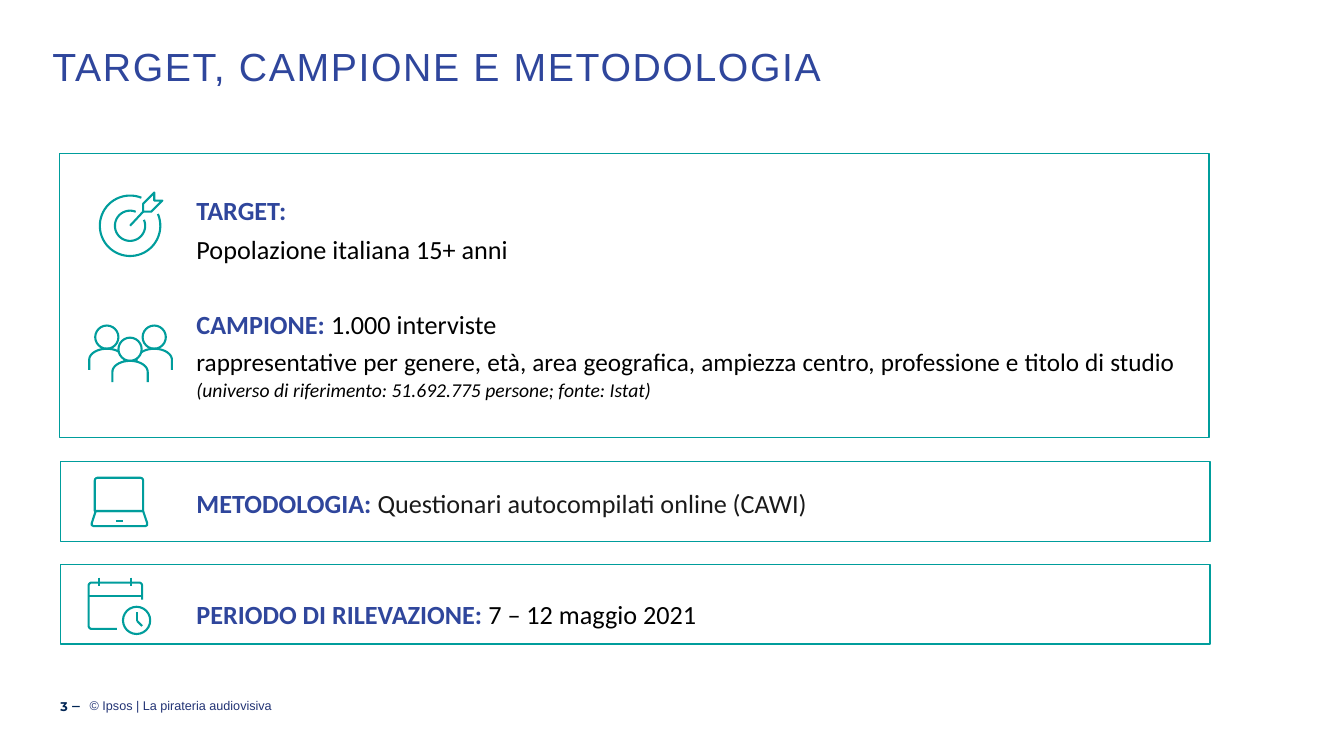
import math

from lxml import etree
from pptx import Presentation
from pptx.dml.color import RGBColor
from pptx.enum.shapes import MSO_CONNECTOR, MSO_SHAPE
from pptx.enum.text import MSO_ANCHOR, PP_ALIGN
from pptx.oxml.ns import qn
from pptx.util import Inches, Pt

RECTANGLE = MSO_SHAPE.RECTANGLE
OVAL = MSO_SHAPE.OVAL
SCREEN = MSO_SHAPE.ROUND_2_SAME_RECTANGLE
STRAIGHT = MSO_CONNECTOR.STRAIGHT
TOP, MIDDLE, BOTTOM = MSO_ANCHOR.TOP, MSO_ANCHOR.MIDDLE, MSO_ANCHOR.BOTTOM
LEFT, JUSTIFY = PP_ALIGN.LEFT, PP_ALIGN.JUSTIFY

COLORS = {
    "teal": "009D9C",
    "blue": "2F469C",
    "black": "000000",
    "ink": "1A1A1A",
    "white": "FFFFFF",
    "footer": "233475",
    "navy": "002554",
}
LABEL = {"name": "Calibri", "size": Pt(18.7), "bold": True, "color": "blue"}
BODY = {"name": "Calibri", "size": Pt(18.7), "color": "black"}
DETAIL = {**BODY, "size": Pt(18)}
NOTE = {**BODY, "size": Pt(14), "italic": True}
TITLE = {"name": "Arial", "size": Pt(28), "color": "blue"}
FOOTER = {"name": "Arial", "size": Pt(9), "color": "footer"}
NUMBER = {"name": "Montserrat", "size": Pt(9), "bold": True, "color": "navy"}
ICON_LINE = 1.5


def color(name):
    return RGBColor.from_string(COLORS[name])


def style_shape(shape, width=ICON_LINE, fill=None):
    shape.shadow.inherit = False
    if fill:
        shape.fill.solid()
        shape.fill.fore_color.rgb = color(fill)
    else:
        shape.fill.background()
    shape.line.color.rgb = color("teal")
    shape.line.width = Pt(width)


def add_preset(shapes, kind, box, width=ICON_LINE, fill=None):
    shape = shapes.add_shape(kind, *map(Inches, box))
    style_shape(shape, width, fill)
    return shape


def add_stroke(shapes, start, end):
    line = shapes.add_connector(STRAIGHT, *map(Inches, start + end))
    line.line.color.rgb = color("teal")
    line.line.width = Pt(ICON_LINE)
    etree.SubElement(line._element.spPr, qn("a:effectLst"))


def add_outline(shapes, points, close=False, fill=None):
    points = [(Inches(x), Inches(y)) for x, y in points]
    builder = shapes.build_freeform(*points[0], scale=1.0)
    builder.add_line_segments(points[1:], close=close)
    style_shape(builder.convert_to_shape(), fill=fill)


def arc(x, y, radius_x, radius_y, start, end):
    """Points on an ellipse; degrees run clockwise from the right."""
    steps = max(4, round(abs(end - start) / 6))
    angles = [math.radians(start + (end - start) * i / steps) for i in range(steps + 1)]
    return [(x + radius_x * math.cos(a), y + radius_y * math.sin(a)) for a in angles]


def add_text(slide, box, runs, align=JUSTIFY, spacing=1.05, anchor=TOP,
             insets=(0.1, 0.05, 0.1, 0.05), tracking=None):
    frame = slide.shapes.add_textbox(*map(Inches, box)).text_frame
    frame.word_wrap = True
    frame.vertical_anchor = anchor
    for side, inset in zip(("left", "top", "right", "bottom"), insets):
        setattr(frame, f"margin_{side}", Inches(inset))
    paragraph = frame.paragraphs[0]
    paragraph.alignment = align
    paragraph.line_spacing = spacing
    for text, formats in runs:
        run = paragraph.add_run()
        run.text = text
        for attribute, value in formats.items():
            if attribute == "color":
                run.font.color.rgb = color(value)
            else:
                setattr(run.font, attribute, value)
        if tracking:
            run._r.get_or_add_rPr().set("spc", str(tracking))


def add_target_icon(slide):
    shapes = slide.shapes.add_group_shape().shapes
    x, y = 1.29, 2.24
    add_stroke(shapes, (x, y), (1.42, 2.1))
    add_outline(shapes, [(1.61, 1.99), (1.5, 2.1), (1.42, 2.1), (1.42, 2.02),
                         (1.53, 1.91), (1.53, 1.99)], close=True)
    for radius in (0.3, 0.15):
        add_outline(shapes, arc(x, y, radius, radius, -23, 292))


def add_people_icon(slide):
    shapes = slide.shapes.add_group_shape().shapes
    head, half = 0.23, 0.175
    for x, top, fill in ((1.06, 3.23, None), (1.53, 3.23, None), (1.29, 3.35, "white")):
        add_preset(shapes, OVAL, (x - head / 2, top, head, head), fill=fill)
        shoulders = arc(x, top + 0.34, half, 0.11, 180, 360)
        feet = top + 0.44
        add_outline(shapes, [(x - half, feet), *shoulders, (x + half, feet)], fill=fill)


def add_laptop_icon(slide):
    shapes = slide.shapes.add_group_shape().shapes
    screen = add_preset(shapes, SCREEN, (0.94, 4.74, 0.48, 0.33))
    screen.adjustments[0] = 0.08
    add_outline(shapes, [(0.95, 5.07), (0.91, 5.19), (0.91, 5.21), (0.93, 5.22),
                         (1.44, 5.22), (1.46, 5.21), (1.46, 5.19), (1.42, 5.07)],
                close=True)
    add_stroke(shapes, (1.15, 5.17), (1.22, 5.17))


def add_calendar_icon(slide):
    shapes = slide.shapes.add_group_shape().shapes
    left, top, right, bottom, corner = 0.88, 5.78, 1.41, 6.24, 0.03
    add_outline(shapes, [
        (1.16, bottom),
        *arc(left + corner, bottom - corner, corner, corner, 90, 180),
        *arc(left + corner, top + corner, corner, corner, 180, 270),
        *arc(right - corner, top + corner, corner, corner, 270, 360),
        (right, 5.95),
    ])
    add_stroke(shapes, (left, 5.91), (right, 5.91))
    for x in (0.98, 1.3):
        add_stroke(shapes, (x, 5.73), (x, 5.81))
    # Clock
    add_preset(shapes, OVAL, (1.22, 6.02, 0.27, 0.27))
    for end in ((1.36, 6.07), (1.41, 6.21)):
        add_stroke(shapes, (1.36, 6.16), end)


def main():
    presentation = Presentation()
    presentation.slide_width = Inches(13.33)
    presentation.slide_height = Inches(7.5)
    slide = presentation.slides.add_slide(presentation.slide_layouts[6])

    # Title
    add_text(slide, (0.44, 0.42, 12.45, 0.53), [("TARGET, CAMPIONE E METODOLOGIA", TITLE)],
             align=LEFT, spacing=0.9, insets=(0.08, 0.05, 0.08, 0.05), tracking=120)

    # Panels
    for left, top, height in ((0.59, 1.52, 2.82), (0.6, 4.58, 0.79), (0.6, 5.6, 0.79)):
        add_preset(slide.shapes, RECTANGLE, (left, top, 11.4, height), 1, "white")

    # Icons
    add_target_icon(slide)
    add_people_icon(slide)
    add_laptop_icon(slide)
    add_calendar_icon(slide)

    # Panel texts
    for top, runs in (
        (1.86, [("TARGET:", LABEL)]),
        (2.25, [("Popolazione italiana 15+ anni", BODY)]),
        (2.99, [("CAMPIONE: ", LABEL), ("1.000 interviste", BODY)]),
        (4.77, [("METODOLOGIA: ", LABEL),
                ("Questionari autocompilati online (CAWI)", {**BODY, "color": "ink"})]),
        (5.87, [("PERIODO DI RILEVAZIONE: ", LABEL), ("7 – 12 maggio 2021", BODY)]),
    ):
        add_text(slide, (1.85, top, 10.15, 0.42), runs)
    add_text(slide, (1.85, 3.37, 9.9, 0.66), [
        ("rappresentative per genere, età, area geografica, ampiezza centro, "
         "professione e titolo di studio ", DETAIL),
        ("(universo di riferimento: 51.692.775 persone; fonte: Istat)", NOTE),
    ])

    # Footer
    add_text(slide, (0.89, 6.8, 11.43, 0.4), [("© Ipsos | La pirateria audiovisiva", FOOTER)],
             align=LEFT, spacing=1.0, anchor=MIDDLE, insets=(0, 0.05, 0, 0.05))
    add_text(slide, (0.52, 6.88, 0.39, 0.25), [("3 ‒", NUMBER)],
             align=LEFT, spacing=1.0, anchor=BOTTOM, insets=(0.08, 0.05, 0, 0.05))

    presentation.save("out.pptx")


if __name__ == "__main__":
    main()
